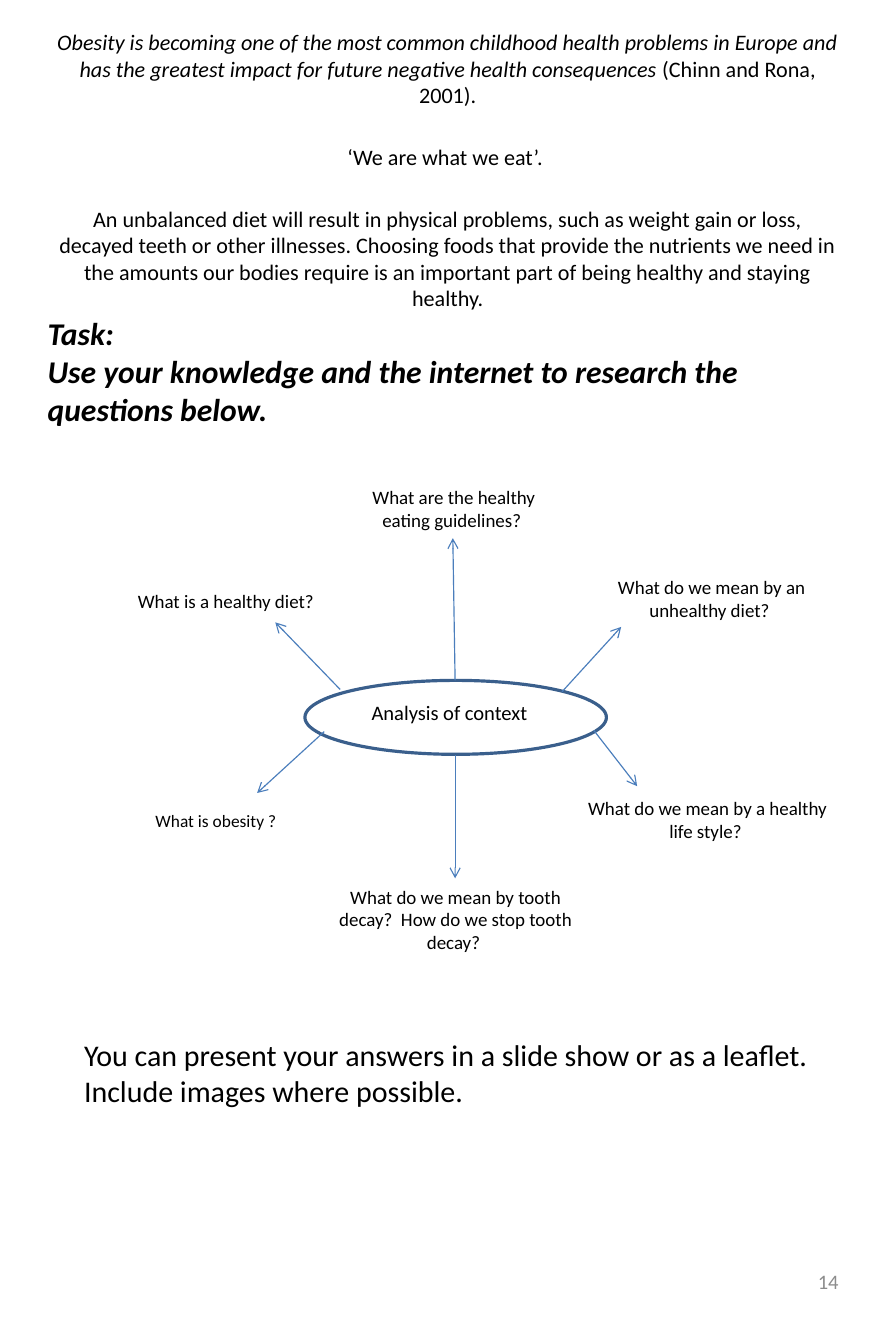
import dataclasses

import lxml.etree
import pptx
import pptx.dml.color
import pptx.enum.shapes
import pptx.enum.text
import pptx.oxml.ns
import pptx.util

CELL = pptx.util.Inches(0.1)
COLOURS = {"text": "000000", "number": "8C8C8C", "oval": "3A5F8C", "arrow": "4B7EBC"}
ALIGN = pptx.enum.text.PP_ALIGN
ANCHOR = pptx.enum.text.MSO_ANCHOR

# Question, size, label box and arrow ends, in cells from the diagram's corner
QUESTIONS = [
    ("What are the healthy eating guidelines? ", 12,
     (24.8, 0, 17.4, 5), (33.6, 17.6), (33.4, 5.1)),
    ("What do we mean by an unhealthy diet? ", 12,
     (43.6, 7.9, 25.1, 5), (43, 18.6), (48.2, 12.9)),
    ("What do we mean by a healthy life style? ", 12,
     (43.6, 27.3, 24.4, 5), (45.8, 22), (49.6, 26.9)),
    ("What do we mean by tooth decay?  How do we stop tooth decay? ", 12,
     (21.5, 35, 24.3, 7.1), (33.6, 24.2), (33.6, 35)),
    ("What is obesity ? ", 11,
     (0, 28.4, 25.5, 2.9), (22.1, 22.1), (16.2, 27.5)),
    ("What is a healthy diet? ", 12,
     (1.9, 7.9, 23.5, 4.2), (23.5, 18.4), (17.8, 12.5)),
]


@dataclasses.dataclass
class Box:
    """A rectangle on the slide, measured in grid cells."""
    left: float
    top: float
    width: float
    height: float

    def inner(self, left, top, width, height):
        return Box(self.left + left, self.top + top, width, height)

    def point(self, column, row):
        return cells(self.left + column), cells(self.top + row)

    def place(self):
        return [cells(n) for n in (self.left, self.top, self.width, self.height)]


def cells(count):
    return round(count * CELL)


def colour(name):
    return pptx.dml.color.RGBColor.from_string(COLOURS[name])


def add_text(slide, box, paragraphs, size, align=ALIGN.LEFT, anchor=ANCHOR.TOP,
             tone="text", inset=0.1, gap=0):
    """Add a text box; each paragraph is a list of its runs' texts."""
    frame = slide.shapes.add_textbox(*box.place()).text_frame
    frame.word_wrap = True
    frame.vertical_anchor = anchor
    frame.margin_left = frame.margin_right = pptx.util.Inches(inset)
    for index, runs in enumerate(paragraphs):
        para = frame.add_paragraph() if index else frame.paragraphs[0]
        para.alignment = align
        para.space_before = pptx.util.Pt(gap if index else 0)
        para.font.name = "Calibri"
        para.font.size = pptx.util.Pt(size)
        para.font.color.rgb = colour(tone)
        for text in runs:
            para.add_run().text = text
    return frame


def add_arrow(slide, start, end):
    arrow = slide.shapes.add_connector(
        pptx.enum.shapes.MSO_CONNECTOR.STRAIGHT, *start, *end)
    arrow.line.color.rgb = colour("arrow")
    arrow.line.width = pptx.util.Pt(0.75)
    qn = pptx.oxml.ns.qn
    outline = arrow.line._get_or_add_ln()
    lxml.etree.SubElement(outline, qn("a:tailEnd"), type="arrow")
    lxml.etree.SubElement(arrow._element.spPr, qn("a:effectLst"))


def add_introduction(slide, box):
    frame = add_text(slide, box, [
        ["Obesity is becoming one of the most common childhood health problems in "
         "Europe and has the greatest impact for future negative health consequences ",
         "(Chinn and Rona, 2001)."],
        ["‘We are what we eat’. "],
        ["An unbalanced diet will result in physical problems, such as weight gain or "
         "loss, decayed teeth or other illnesses. Choosing foods that provide the "
         "nutrients we need in the amounts our bodies require is an important part of "
         "being healthy and staying healthy."],
    ], 14, ALIGN.CENTER, inset=0.11, gap=22.3)
    frame.paragraphs[0].runs[0].font.italic = True


def add_task(slide, box):
    frame = add_text(slide, box, [
        ["Task:"],
        ["Use your knowledge and the internet to research the questions below."],
    ], 20)
    for para in frame.paragraphs:
        para.font.bold = para.font.italic = True


def add_diagram(slide, box):
    """Draw the central oval with an arrow to each question."""
    oval = slide.shapes.add_shape(pptx.enum.shapes.MSO_SHAPE.OVAL,
                                  *box.inner(20.4, 17.6, 26.5, 6.5).place())
    oval.shadow.inherit = False
    oval.fill.background()
    oval.line.color.rgb = colour("oval")
    oval.line.width = pptx.util.Pt(2)
    add_text(slide, box.inner(23.4, 18.8, 19.8, 3.3), [["Analysis of context "]],
             13, ALIGN.CENTER, inset=0.11)
    for question, size, label, start, end in QUESTIONS:
        add_arrow(slide, box.point(*start), box.point(*end))
        add_text(slide, box.inner(*label), [[question]], size,
                 ALIGN.CENTER, ANCHOR.BOTTOM)


def add_closing(slide, box):
    add_text(slide, box, [["You can present your answers in a slide show or as a "
                           "leaflet. Include images where possible."]], 19)


def add_page_number(slide, box):
    add_text(slide, box, [["14"]], 13, ALIGN.RIGHT, ANCHOR.MIDDLE, "number", 0.11)


def set_custom_size(deck, width, height):
    """Set the slide size and drop the template's 4:3 screen type."""
    deck.slide_width = width
    deck.slide_height = height
    deck.element.sldSz.attrib.pop("type", None)


def main():
    deck = pptx.Presentation()
    set_custom_size(deck, pptx.util.Emu(7200900), pptx.util.Emu(10801350))
    slide = deck.slides.add_slide(deck.slide_layouts[6])
    add_introduction(slide, Box(3.9, 2, 70.9, 23.1))
    add_diagram(slide, Box(6.4, 42.2, 68.7, 42.1))
    add_task(slide, Box(3.2, 27.1, 72.8, 11.1))
    add_closing(slide, Box(6.4, 90.6, 68.1, 7.4))
    add_page_number(slide, Box(56.4, 109.5, 18.4, 6.3))
    deck.save("out.pptx")


if __name__ == "__main__":
    main()
